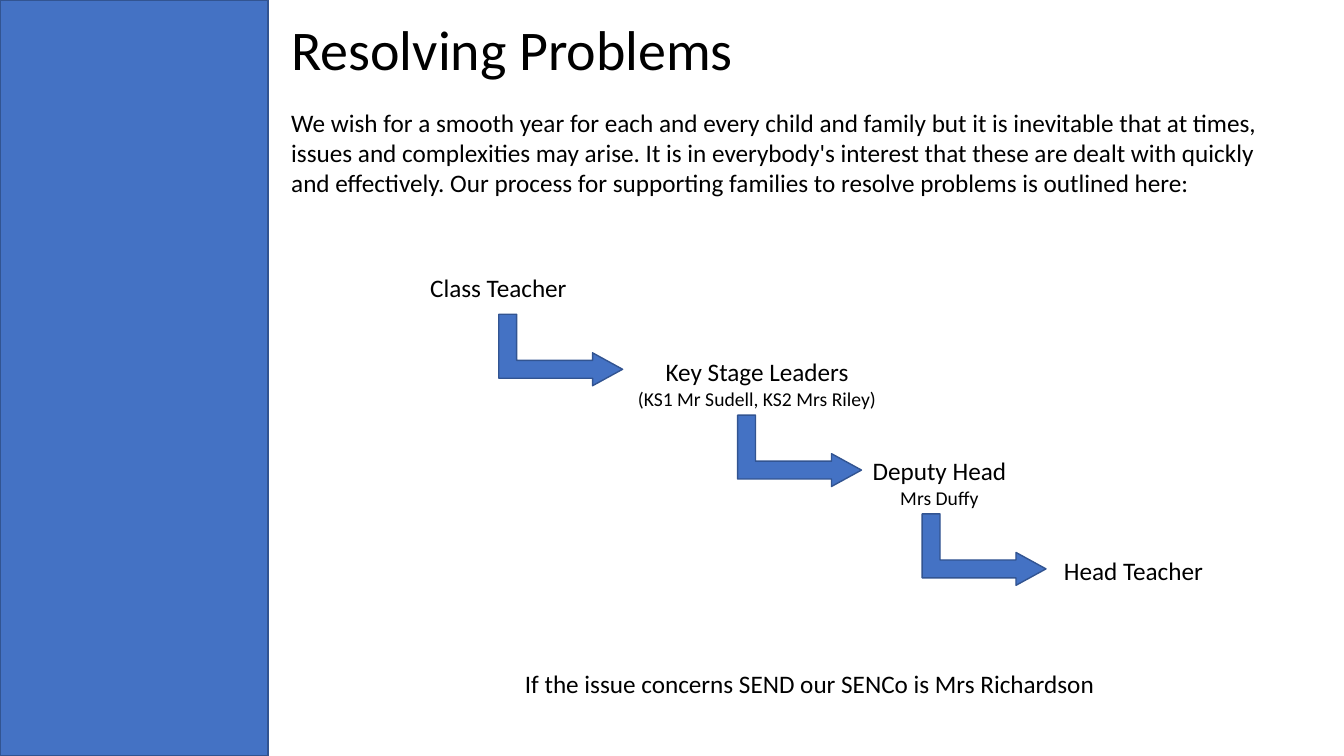
from pptx import Presentation
from pptx.dml.color import RGBColor
from pptx.enum.shapes import MSO_SHAPE
from pptx.enum.text import MSO_ANCHOR, MSO_AUTO_SIZE, PP_ALIGN
from pptx.util import Cm, Pt

RECTANGLE = MSO_SHAPE.RECTANGLE
BENT_ARROW = MSO_SHAPE.BENT_UP_ARROW
LEFT, CENTER = PP_ALIGN.LEFT, PP_ALIGN.CENTER
TOP = MSO_ANCHOR.TOP
NO_AUTOFIT = MSO_AUTO_SIZE.NONE

INTRO = (
    "We wish for a smooth year for each and every child and family but it is "
    "inevitable that at times, issues and complexities may arise. It is in "
    "everybody's interest that these are dealt with quickly and effectively. "
    "Our process for supporting families to resolve problems is outlined here:"
)
STEPS = [
    (["Class Teacher"], (10.39, 6.73, 4.34, 1.02)),
    (["Key Stage Leaders", "(KS1 Mr Sudell, KS2 Mrs Riley)"], (15.37, 8.86, 7.42, 1.63)),
    (["Deputy Head", "Mrs Duffy"], (21.01, 11.35, 5.33, 1.63)),
    (["Head Teacher"], (25.58, 13.87, 5.97, 1.02)),
]
ARROW_CORNERS = [(13.23, 7.26), (19.25, 9.8), (23.9, 12.29)]
ARROW_SIZE = (1.8, 3.12)


def color(code):
    return RGBColor.from_string(code)


class SlideBuilder:
    font = "Calibri"
    ink = "000000"
    accent = "4472C4"
    outline = "325491"
    heading_size, body_size, note_size = 40, 18, 14

    def __init__(self, page):
        self.page = page

    def fill_text(self, frame, lines, sizes, align, wrap):
        frame.text = "\n".join(lines)
        frame.auto_size = NO_AUTOFIT
        frame.word_wrap = wrap
        frame.vertical_anchor = TOP
        for para, size in zip(frame.paragraphs, sizes):
            para.alignment = align
            for span in para.runs:
                span.font.name = self.font
                span.font.size = Pt(size)
                span.font.color.rgb = color(self.ink)

    def title(self, text, left, top, width, height):
        box = self.page.shapes.title
        box.left, box.top, box.width, box.height = map(Cm, (left, top, width, height))
        self.fill_text(box.text_frame, [text], [self.heading_size], LEFT, False)

    def text(self, lines, area, align=LEFT, wrap=True):
        box = self.page.shapes.add_textbox(*map(Cm, area))
        sizes = (self.body_size, self.note_size)
        self.fill_text(box.text_frame, lines, sizes, align, wrap)

    def shape(self, kind, area):
        shape = self.page.shapes.add_shape(kind, *map(Cm, area))
        shape.shadow.inherit = False
        shape.fill.solid()
        shape.fill.fore_color.rgb = color(self.accent)
        shape.line.color.rgb = color(self.outline)
        shape.line.width = Pt(1)
        return shape

    def arrow(self, corner):
        arrow = self.shape(BENT_ARROW, (*corner, *ARROW_SIZE))
        arrow.rotation = 90
        for index, value in enumerate((0.25, 0.23, 0.42)):
            arrow.adjustments[index] = value


def main():
    deck = Presentation()
    deck.slide_width, deck.slide_height = Cm(33.87), Cm(19.05)
    builder = SlideBuilder(deck.slides.add_slide(deck.slide_layouts[5]))

    builder.shape(RECTANGLE, (0, 0, 6.76, 19.05))
    builder.title("Resolving Problems", 7.09, 0.23, 11.76, 1.96)
    builder.text([INTRO], (7.09, 2.57, 24.92, 2.57))
    for lines, area in STEPS:
        builder.text(lines, area, CENTER)
    for corner in ARROW_CORNERS:
        builder.arrow(corner)
    builder.text(
        ["If the issue concerns SEND our SENCo is Mrs Richardson"],
        (12.98, 16.71, 15.04, 1.02),
        wrap=False,
    )
    deck.save("out.pptx")


if __name__ == "__main__":
    main()
